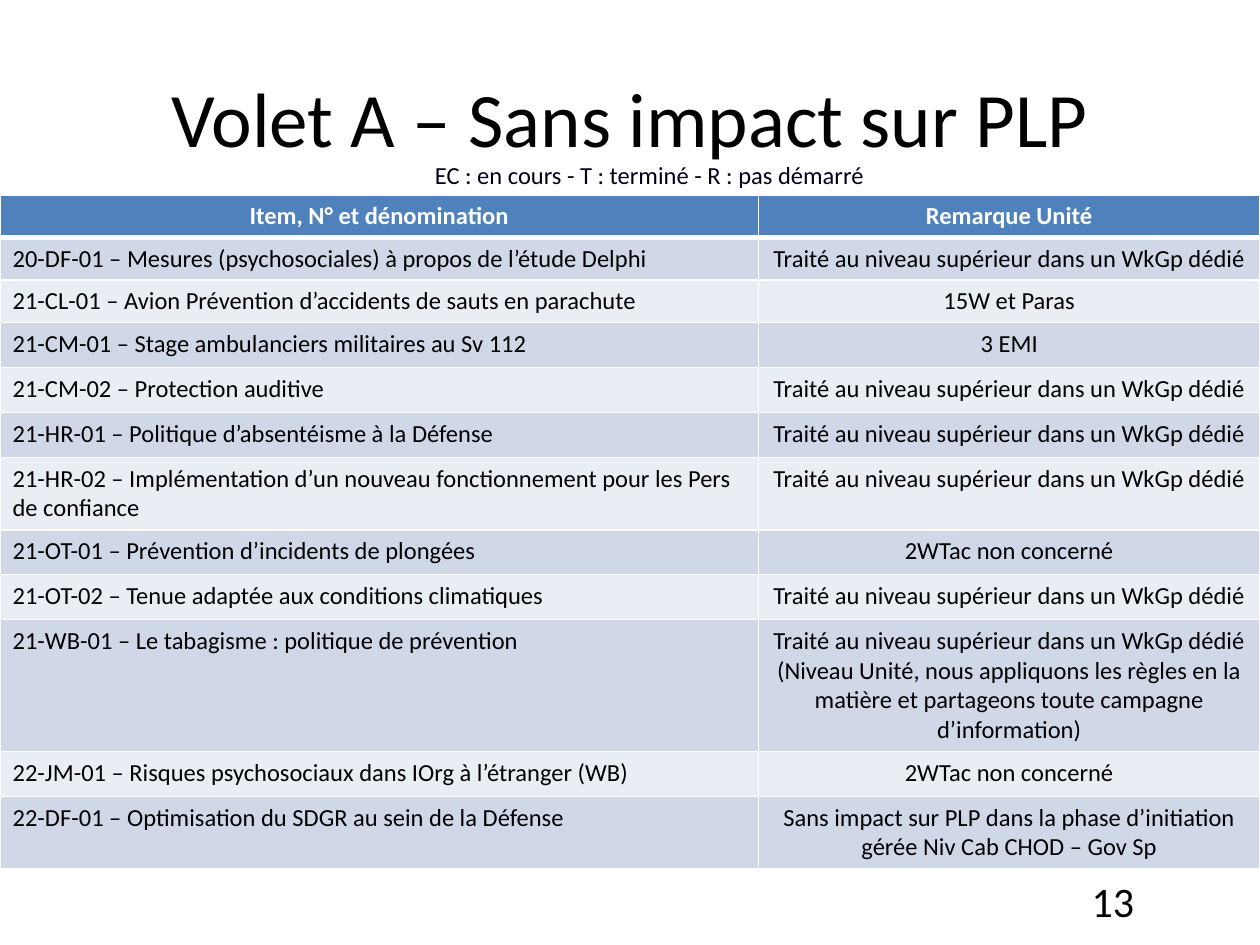
from dataclasses import dataclass

from lxml import etree
from pptx import Presentation
from pptx import util as u
from pptx.dml.color import RGBColor
from pptx.enum import text as t
from pptx.oxml import ns

BLACK = RGBColor(0x00, 0x00, 0x00)
WHITE = RGBColor(0xFF, 0xFF, 0xFF)
NAVY = RGBColor(0x00, 0x00, 0x18)
BLUE = RGBColor(0x4F, 0x81, 0xBD)
DARK = RGBColor(0xD0, 0xD8, 0xE8)
LIGHT = RGBColor(0xE9, 0xED, 0xF4)
FONT = "Calibri"
LEFT, MID, RIGHT = t.PP_ALIGN.LEFT, t.PP_ALIGN.CENTER, t.PP_ALIGN.RIGHT
CENTRE, BOTTOM = t.MSO_ANCHOR.MIDDLE, t.MSO_ANCHOR.BOTTOM


@dataclass
class Label:
    text: str
    left: float
    top: float
    width: float
    height: float
    size: float
    align: t.PP_ALIGN = MID
    anchor: t.MSO_ANCHOR = CENTRE
    color: RGBColor = BLACK


@dataclass
class Item:
    name: str
    note: str


LABELS = [
    Label("Volet A – Sans impact sur PLP", 36, 21.6, 648, 90, 44),
    Label("13", 516.24, 500.4, 138.96, 28.8, 24, RIGHT),
    Label("EC : en cours - T : terminé - R : pas démarré",
          172.8, 84.24, 396.72, 27.36, 14, MID, BOTTOM, NAVY),
]

ABOVE = "Traité au niveau supérieur dans un WkGp dédié"
NONE = "2WTac non concerné"
ITEMS = [
    Item("Item, N° et dénomination", "Remarque Unité"),
    Item("20-DF-01 – Mesures (psychosociales) à propos de l’étude Delphi", ABOVE),
    Item("21-CL-01 – Avion Prévention d’accidents de sauts en parachute", "15W et Paras"),
    Item("21-CM-01 – Stage ambulanciers militaires au Sv 112", "3 EMI"),
    Item("21-CM-02 – Protection auditive", ABOVE),
    Item("21-HR-01 – Politique d’absentéisme à la Défense", ABOVE),
    Item("21-HR-02 – Implémentation d’un nouveau fonctionnement pour les Pers "
         "de confiance", ABOVE),
    Item("21-OT-01 – Prévention d’incidents de plongées", NONE),
    Item("21-OT-02 – Tenue adaptée aux conditions climatiques", ABOVE),
    Item("21-WB-01 – Le tabagisme : politique de prévention",
         ABOVE + "\n(Niveau Unité, nous appliquons les règles en la matière "
         "et partageons toute campagne d’information)"),
    Item("22-JM-01 – Risques psychosociaux dans IOrg à l’étranger (WB)", NONE),
    Item("22-DF-01 – Optimisation du SDGR au sein de la Défense",
         "Sans impact sur PLP dans la phase d’initiation gérée Niv Cab CHOD – Gov Sp"),
]
WIDTHS = (433.44, 286.56)
HEIGHTS = [18.72] * 3 + [25.7] * 9


def write(frame, words: str, size: float, align: t.PP_ALIGN,
          color: RGBColor, bold: bool = False) -> None:
    frame.text = words
    for para in frame.paragraphs:
        para.alignment = align
        font = para.font
        font.name, font.size, font.bold = FONT, u.Pt(size), bold
        font.color.rgb = color


def add_label(slide, label: Label) -> None:
    box = slide.shapes.add_textbox(u.Pt(label.left), u.Pt(label.top),
                                   u.Pt(label.width), u.Pt(label.height))
    frame = box.text_frame
    frame.word_wrap = True
    frame.vertical_anchor = label.anchor
    write(frame, label.text, label.size, label.align, label.color)


def add_edges(cell, top: float, base: float) -> None:
    """Draw white cell borders; they must come before the fill in the XML."""
    props = cell._tc.get_or_add_tcPr()
    edges = {"a:lnL": 1, "a:lnR": 1, "a:lnT": top, "a:lnB": base}
    for spot, (tag, width) in enumerate(edges.items()):
        line = etree.Element(ns.qn(tag), w=str(u.Pt(width)))
        fill = etree.SubElement(line, ns.qn("a:solidFill"))
        etree.SubElement(fill, ns.qn("a:srgbClr"), val=str(WHITE))
        props.insert(spot, line)


def add_items(slide) -> None:
    shape = slide.shapes.add_table(len(ITEMS), len(WIDTHS), u.Pt(0), u.Pt(111.6),
                                   u.Pt(sum(WIDTHS)), u.Pt(382.32))
    table = shape.table
    for col, width in zip(table.columns, WIDTHS):
        col.width = u.Pt(width)
    for num, (row, height, item) in enumerate(zip(table.rows, HEIGHTS, ITEMS)):
        row.height = u.Pt(height)
        head = num == 0
        shade = BLUE if head else DARK if num % 2 else LIGHT
        aligns = (MID if head else LEFT, MID)
        for cell, words, align in zip(row.cells, (item.name, item.note), aligns):
            write(cell.text_frame, words, 14, align, WHITE if head else BLACK, head)
            if head:
                cell.vertical_anchor = CENTRE
            cell.fill.solid()
            cell.fill.fore_color.rgb = shade
            add_edges(cell, 3 if num == 1 else 1, 3 if head else 1)


def main() -> None:
    deck = Presentation()
    deck.slide_width, deck.slide_height = u.Pt(720), u.Pt(540)
    slide = deck.slides.add_slide(deck.slide_layouts[6])
    add_items(slide)
    for label in LABELS:
        add_label(slide, label)
    deck.save("out.pptx")


if __name__ == "__main__":
    main()
